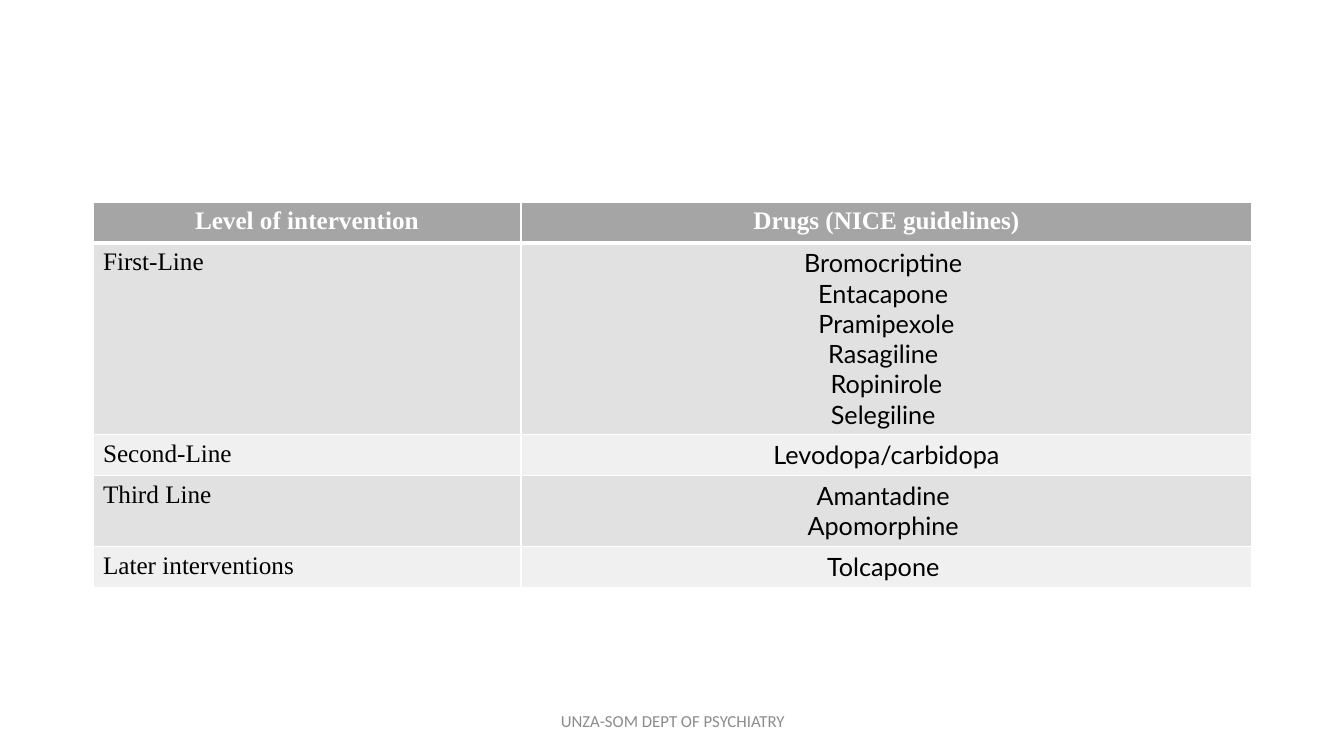
from lxml import etree
from pptx import Presentation
from pptx.dml.color import RGBColor
from pptx.enum.text import MSO_ANCHOR, PP_ALIGN
from pptx.oxml.ns import qn
from pptx.util import Pt

EMU_PER_PX = 914400 / 100.8
LEFT = PP_ALIGN.LEFT
CENTER = PP_ALIGN.CENTER
MIDDLE = MSO_ANCHOR.MIDDLE
SERIF = "Times New Roman"
WHITE = "FFFFFF"
BLACK = "000000"
HEADER_FILL = "A5A5A5"
BAND_FILLS = ("E1E1E1", "F0F0F0")
ROW_HEIGHT = 41
LINE_HEIGHT = 30
COLUMN_WIDTHS = (428, 731)
HEADINGS = ("Level of intervention", "Drugs (NICE guidelines)")
TREATMENTS = (
    ("First-Line", ("Bromocriptine ", "Entacapone ", "Pramipexole",
                    "Rasagiline ", "Ropinirole", "Selegiline ")),
    ("Second-Line", ("Levodopa/carbidopa",)),
    ("Third Line", ("Amantadine ", "Apomorphine ")),
    ("Later interventions", ("Tolcapone ",)),
)


def px(length):
    return round(length * EMU_PER_PX)


def color(value):
    return RGBColor.from_string(value)


def write_lines(frame, lines, font, size, ink, align, bold=False):
    for index, line in enumerate(lines):
        para = frame.add_paragraph() if index else frame.paragraphs[0]
        para.alignment = align
        span = para.add_run()
        span.text = line
        span.font.name = font
        span.font.size = Pt(size)
        span.font.bold = bold
        span.font.color.rgb = color(ink)


def set_borders(cell, top, bottom):
    properties = cell._tc.get_or_add_tcPr()
    sides = (("a:lnL", 1), ("a:lnR", 1), ("a:lnT", top), ("a:lnB", bottom))
    for position, (side, width) in enumerate(sides):
        border = etree.Element(qn(side), w=str(Pt(width)))
        fill = etree.SubElement(border, qn("a:solidFill"))
        etree.SubElement(fill, qn("a:srgbClr"), val=WHITE)
        properties.insert(position, border)


def fill_cell(cell, lines, font, ink, align, fill, bold=False, top=1, bottom=1):
    cell.fill.solid()
    cell.fill.fore_color.rgb = color(fill)
    set_borders(cell, top, bottom)
    write_lines(cell.text_frame, lines, font, 18, ink, align, bold)


def add_treatment_table(page):
    line_counts = [1] + [len(drugs) for _, drugs in TREATMENTS]
    heights = [ROW_HEIGHT + LINE_HEIGHT * (count - 1) for count in line_counts]
    table = page.shapes.add_table(
        len(heights), len(COLUMN_WIDTHS), px(93), px(202),
        px(sum(COLUMN_WIDTHS)), px(sum(heights))).table
    for column, width in zip(table.columns, COLUMN_WIDTHS):
        column.width = px(width)
    for row, height in zip(table.rows, heights):
        row.height = px(height)
    for column, heading in enumerate(HEADINGS):
        fill_cell(table.cell(0, column), [heading], SERIF, WHITE, CENTER,
                  HEADER_FILL, bold=True, bottom=3)
    for row, (level, drugs) in enumerate(TREATMENTS, start=1):
        fill = BAND_FILLS[(row - 1) % 2]
        top = 3 if row == 1 else 1
        fill_cell(table.cell(row, 0), [level], SERIF, BLACK, LEFT, fill, top=top)
        fill_cell(table.cell(row, 1), drugs, "Lato", BLACK, CENTER, fill, top=top)


def add_footer(page, text):
    box = page.shapes.add_textbox(px(446), px(701), px(454), px(40))
    frame = box.text_frame
    frame.word_wrap = True
    frame.vertical_anchor = MIDDLE
    write_lines(frame, [text], "Calibri", 12, "8C8C8C", CENTER)


def main():
    deck = Presentation()
    deck.slide_width = px(1344)
    deck.slide_height = px(756)
    page = deck.slides.add_slide(deck.slide_layouts[6])
    add_treatment_table(page)
    add_footer(page, "UNZA-SOM DEPT OF PSYCHIATRY")
    deck.save("out.pptx")


if __name__ == "__main__":
    main()
